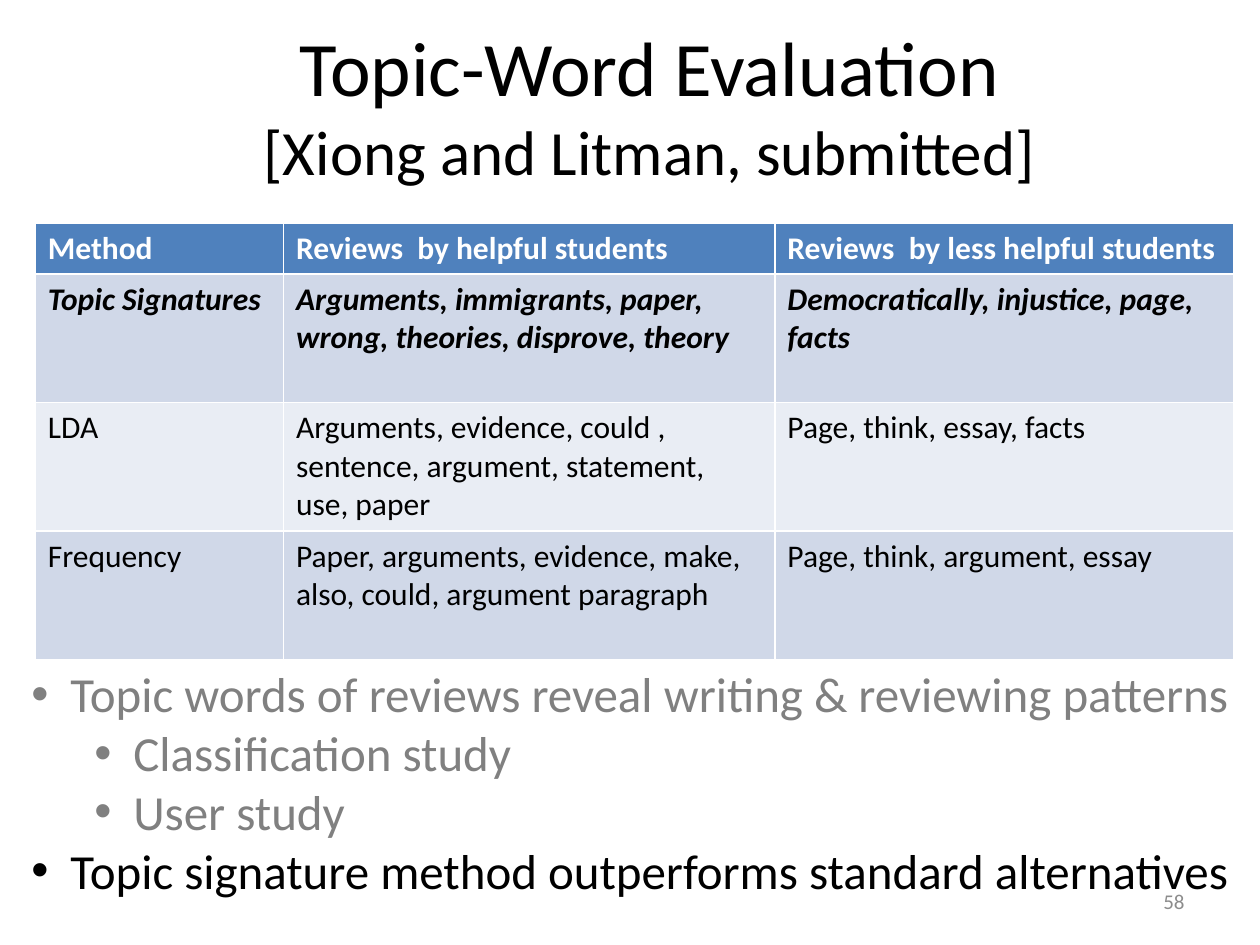
"""Build the topic-word evaluation slide with its table and findings."""
from lxml.etree import SubElement
from pptx import Presentation
from pptx.dml.color import RGBColor
from pptx.enum.text import MSO_ANCHOR, MSO_AUTO_SIZE, PP_ALIGN
from pptx.oxml.ns import qn
from pptx.util import Inches, Pt

INK = {"black": "000000", "white": "FFFFFF", "gray": "808080", "pale": "8C8C8C",
       "head": "4F81BD", "odd": "D0D8E8", "even": "E9EDF4"}


def put(para, text, size=18, ink="black", bold=False, slant=False, align=None):
    run = para.add_run()
    run.text = text
    font = run.font
    font.name, font.size, font.bold, font.italic = "Calibri", Pt(size), bold, slant
    font.color.rgb = RGBColor.from_string(INK[ink])
    if align is not None:
        para.alignment = align


def place(left, top, width, height):
    return (int(left * wide), int(top * high), int(width * wide), int(height * high))


deck = Presentation()
wide, high = deck.slide_width, deck.slide_height = Inches(10), Inches(7.5)
slide = deck.slides.add_slide(deck.slide_layouts[5])

title = slide.shapes.title
title.left, title.top, title.width, title.height = place(0.053, 0.2 / 7.5, 0.925, 1 / 6)
frame = title.text_frame
frame.auto_size = MSO_AUTO_SIZE.NONE
frame.vertical_anchor = MSO_ANCHOR.MIDDLE
para = frame.paragraphs[0]
put(para, "Topic-Word Evaluation", size=44, align=PP_ALIGN.CENTER)
para.add_line_break()
put(para, "[Xiong and Litman, submitted]", size=36)

rows = [
    ("Method", "Reviews  by helpful students", "Reviews  by less helpful students"),
    ("Topic Signatures", "Arguments, immigrants, paper, wrong, theories, disprove, theory",
     "Democratically, injustice, page, facts"),
    ("LDA", "Arguments, evidence, could , sentence, argument, statement, use, paper",
     "Page, think, essay, facts"),
    ("Frequency", "Paper, arguments, evidence, make, also, could, argument paragraph",
     "Page, think, argument, essay"),
]
grid = slide.shapes.add_table(len(rows), 3, *place(0.028, 1.77 / 7.5, 0.95, 0.46)).table
for col, share in zip(grid.columns, (0.197, 0.39, 0.364)):
    col.width = int(share * wide)
for i, row in enumerate(rows):
    grid.rows[i].height = Inches(1.02 if i else 0.39)
    for j, text in enumerate(row):
        cell = grid.cell(i, j)
        cell.fill.solid()
        fill = "head" if i == 0 else "odd" if i % 2 else "even"
        cell.fill.fore_color.rgb = RGBColor.from_string(INK[fill])
        put(cell.text_frame.paragraphs[0], text, ink="black" if i else "white",
            bold=i < 2, slant=i == 1)

page = slide.shapes.add_textbox(*place(0.717, 6.95 / 7.5, 0.233, 0.4 / 7.5)).text_frame
page.word_wrap = True
page.vertical_anchor = MSO_ANCHOR.MIDDLE
put(page.paragraphs[0], "58", size=12, ink="pale", align=PP_ALIGN.RIGHT)

notes = slide.shapes.add_textbox(*place(0.015, 5.22 / 7.5, 0.975, 1.99 / 7.5)).text_frame
notes.word_wrap = True
notes.auto_size = MSO_AUTO_SIZE.SHAPE_TO_FIT_TEXT
points = [
    ("Topic words of reviews reveal writing & reviewing patterns", 0, "gray"),
    ("Classification study", 1, "gray"),
    ("User study", 1, "gray"),
    ("Topic signature method outperforms standard alternatives", 0, "black"),
]
for i, (text, level, ink) in enumerate(points):
    para = notes.add_paragraph() if i else notes.paragraphs[0]
    para.level = level
    put(para, text, size=28, ink=ink)
    props = para._p.get_or_add_pPr()
    props.set("marL", str(Inches(0.31 + level / 2)))
    props.set("indent", str(-Inches(0.31)))
    SubElement(props, qn("a:buFont")).set("typeface", "Arial")
    SubElement(props, qn("a:buChar")).set("char", "•")

deck.save("out.pptx")
